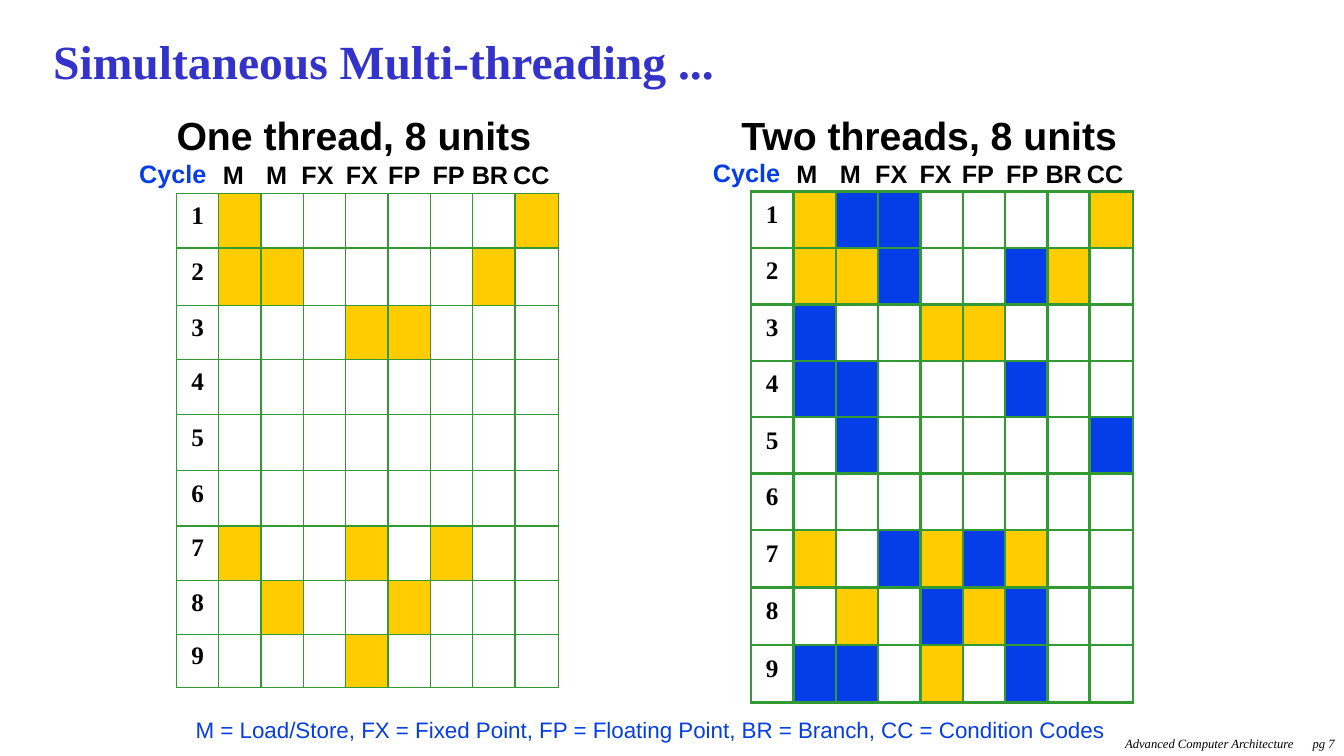
"""Build the simultaneous multi-threading slide with its two issue-slot grids."""
from lxml.etree import SubElement
from pptx import Presentation
from pptx.dml.color import RGBColor
from pptx.enum.text import MSO_ANCHOR, PP_ALIGN
from pptx.oxml.ns import qn
from pptx.util import Pt

PX = 9144
BLACK, BLUE, GOLD, GREEN, INDIGO = "000000", "053DE8", "FFCC00", "339933", "3333CC"
SERIF, SANS = "Times New Roman", "Arial"


def add_run(p, text, size, color, font=SANS, bold=True, italic=False):
    r = p.add_run()
    r.text = text
    r.font.size, r.font.name = Pt(size), font
    r.font.bold, r.font.italic = bold, italic
    r.font.color.rgb = RGBColor.from_string(color)


def add_text(x, y, w, h, text, size, color, align=PP_ALIGN.LEFT, margins=(0, 0), **style):
    tf = s.shapes.add_textbox(x * PX, y * PX, w * PX, h * PX).text_frame
    tf.word_wrap = True
    tf.margin_left = margins[0] * PX
    tf.margin_right = margins[0] * PX
    tf.margin_top = tf.margin_bottom = margins[1] * PX
    p = tf.paragraphs[0]
    p.alignment = align
    add_run(p, text, size, color, **style)
    return tf


prs = Presentation()
prs.slide_width, prs.slide_height = 1333 * PX, 750 * PX
s = prs.slides.add_slide(prs.slide_layouts[6])

footer = add_text(950, 725, 383, 25, "Advanced Computer Architecture\tpg 7", 9, BLACK,
                  margins=(0, 5), font=SERIF, bold=False, italic=True)
footer.margin_left = 166 * PX
tabs = SubElement(footer.paragraphs[0]._p.get_or_add_pPr(), qn("a:tabLst"))
SubElement(tabs, qn("a:tab"), pos=str(186 * PX), algn="l")

title = add_text(43, 25, 1246, 80, "Simultaneous Multi-threading ...", 34, INDIGO,
                 margins=(10, 5), font=SERIF)
title.vertical_anchor = MSO_ANCHOR.MIDDLE
title.paragraphs[0].line_spacing = 0.8

units = [("M", 0, 34), ("M", 43, 34), ("FX", 78, 45), ("FX", 122, 48),
         ("FP", 164, 48), ("FP", 208, 48), ("BR", 247, 54), ("CC", 288, 50)]
col_widths = [42] * 8 + [43]
slot_colors = {"G": GOLD, "B": BLUE}
grids = [
    dict(heading="One thread, 8 units", heading_x=131, heading_w=440,
         x=175, y=192, labels_x=221, labels_y=158, border=1,
         row_heights=[54, 57, 54, 54, 56, 55, 54, 54, 52],
         slots=["G......G", "GG....G.", "...GG...", "........", "........",
                "........", "G..G.G..", ".G..G...", "...G...."]),
    dict(heading="Two threads, 8 units", heading_x=692, heading_w=459,
         x=745, y=190, labels_x=790, labels_y=157, border=2,
         row_heights=[56] * 6 + [57] * 3,
         slots=["GBB....G", "GGB..BG.", "B..GG...", "BB...B..", ".B.....B",
                "........", "G.BGBG..", ".G.BGB..", "BB.G.B.."]),
]

for grid in grids:
    heights = grid["row_heights"]
    table = s.shapes.add_table(9, 9, grid["x"] * PX, grid["y"] * PX,
                               sum(col_widths) * PX, sum(heights) * PX).table
    table.first_row = table.horz_banding = False
    for col, width in zip(table.columns, col_widths):
        col.width = width * PX
    for i, (height, slots) in enumerate(zip(heights, grid["slots"])):
        table.rows[i].height = height * PX
        for j, slot in enumerate("." + slots):
            cell = table.cell(i, j)
            tcPr = cell._tc.get_or_add_tcPr()
            for side in ("lnL", "lnR", "lnT", "lnB"):
                ln = SubElement(tcPr, qn(f"a:{side}"), w=str(Pt(grid["border"])))
                SubElement(SubElement(ln, qn("a:solidFill")), qn("a:srgbClr"), val=GREEN)
            if slot in slot_colors:
                cell.fill.solid()
                cell.fill.fore_color.rgb = RGBColor.from_string(slot_colors[slot])
            else:
                cell.fill.background()
        cycle = table.cell(i, 0)
        cycle.vertical_anchor = MSO_ANCHOR.MIDDLE
        cycle.margin_left = cycle.margin_right = 9 * PX
        cycle.margin_top = cycle.margin_bottom = 4 * PX
        p = cycle.text_frame.paragraphs[0]
        p.alignment = PP_ALIGN.CENTER
        p.line_spacing, p.space_before = Pt(13), Pt(3.6)
        add_run(p, str(i + 1), 18, BLACK, SERIF)

    x, y = grid["labels_x"], grid["labels_y"]
    for unit, dx, width in units:
        add_text(x + dx, y, width, 30, unit, 18, BLACK)
    add_text(x - 83, y - 1, 92, 30, "Cycle", 18, BLUE)
    heading = add_text(grid["heading_x"], 115, grid["heading_w"], 43, grid["heading"],
                       28, BLACK, PP_ALIGN.CENTER)
    heading.paragraphs[0].line_spacing = Pt(30.6)

add_text(194, 710, 934, 27,
         "M = Load/Store, FX = Fixed Point, FP = Floating Point, BR = Branch, CC = Condition Codes",
         16, BLUE, bold=False)

prs.save("out.pptx")
